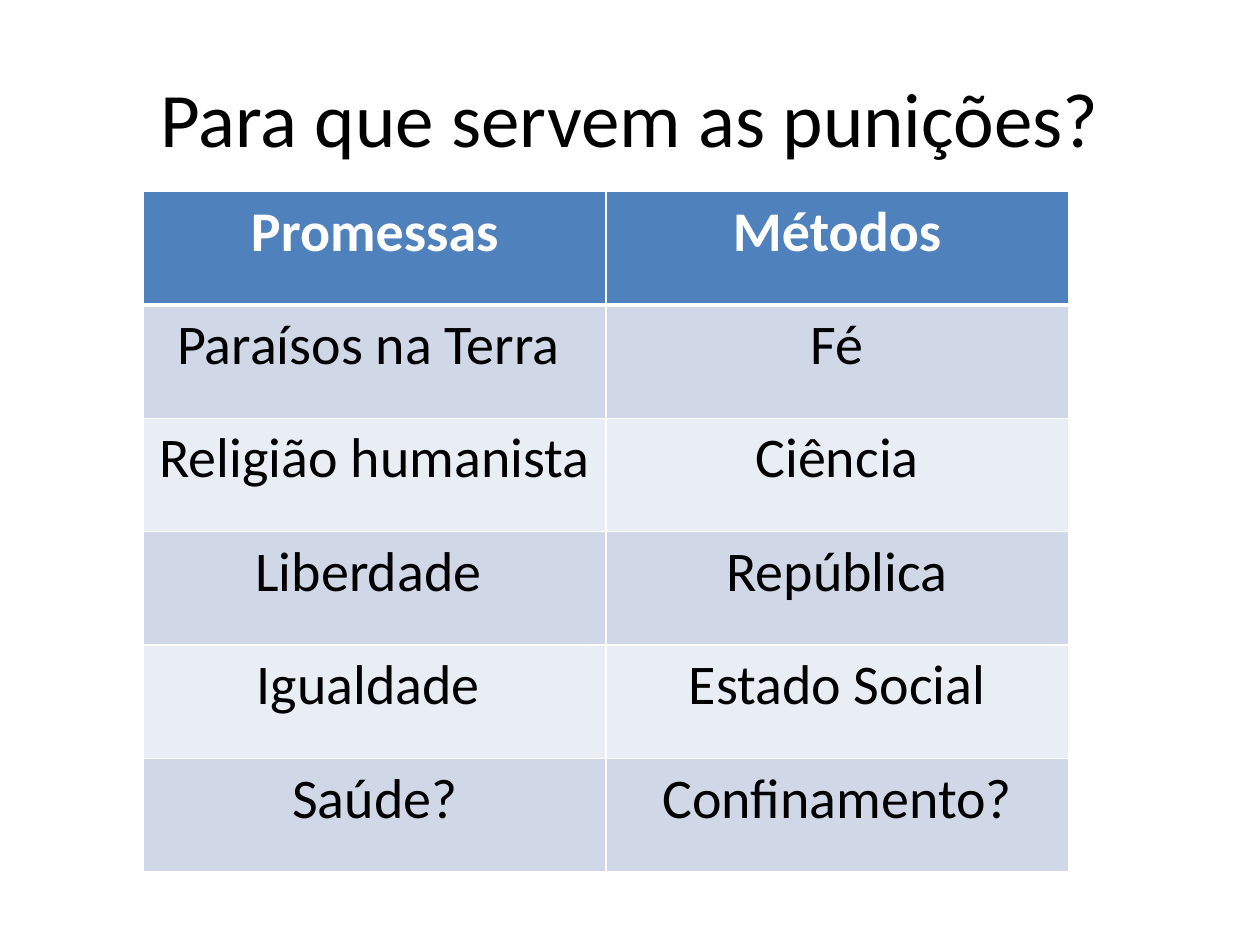
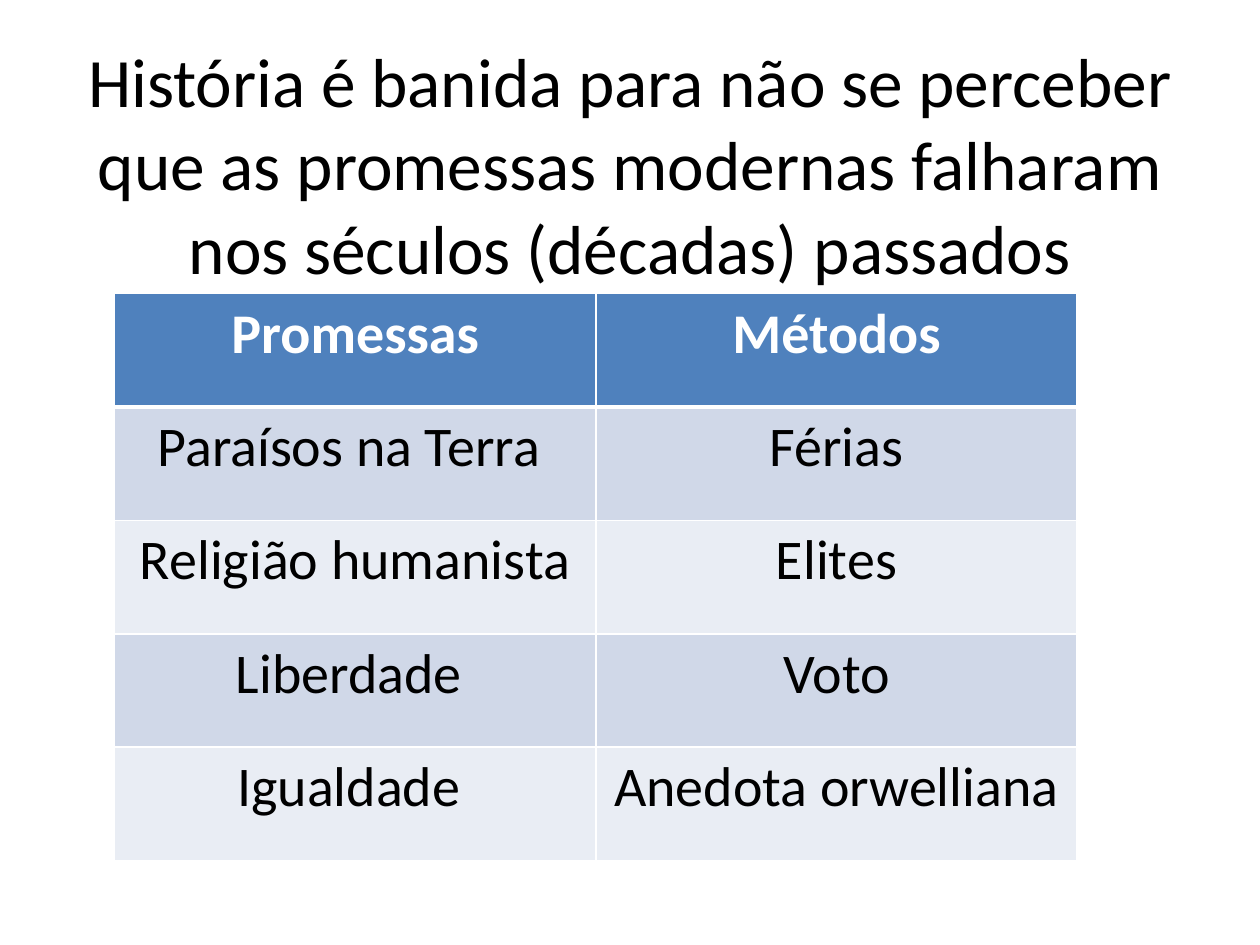
import pptx
import pptx.dml.color
import pptx.enum.text
import pptx.oxml
import pptx.oxml.ns
import pptx.util
from pptx.util import Inches

FONT = "Calibri"
BLACK, WHITE = "000000", "FFFFFF"
HEADER_FILL = "4F81BD"
BAND_FILLS = ("D0D8E8", "E9EDF4")
ROW_HEIGHT = 0.9
CELL_SIZE = 32
HEADINGS = ("Promessas", "Métodos")

SLIDES = [
    {
        "title": "Para que servem as punições?",
        "title_top": 0.3,
        "title_size": 44,
        "table_at": (1.14, 1.52),
        "column_width": 3.67,
        "rows": [
            ("Paraísos na Terra ", "Fé"),
            ("Religião humanista", "Ciência"),
            ("Liberdade ", "República"),
            ("Igualdade ", "Estado Social"),
            ("Saúde?", "Confinamento?"),
        ],
    },
    {
        "title": "História é banida para não se perceber que as promessas "
                 "modernas falharam nos séculos (décadas) passados",
        "title_top": 0.67,
        "title_size": 39.6,
        "table_at": (0.91, 2.33),
        "column_width": 3.82,
        "rows": [
            ("Paraísos na Terra ", "Férias"),
            ("Religião humanista", "Elites"),
            ("Liberdade ", "Voto"),
            ("Igualdade ", "Anedota orwelliana"),
        ],
    },
]


def color(hex_code):
    return pptx.dml.color.RGBColor.from_string(hex_code)


def write_centred(frame, text, size, hex_code, bold=False):
    para = frame.paragraphs[0]
    para.alignment = pptx.enum.text.PP_ALIGN.CENTER
    span = para.add_run()
    span.text = text
    span.font.name = FONT
    span.font.size = pptx.util.Pt(size)
    span.font.bold = bold
    span.font.color.rgb = color(hex_code)


def set_borders(cell, top, bottom):
    """Draw white borders; top and bottom are widths in points."""
    properties = cell._tc.get_or_add_tcPr()
    widths = {"lnL": 1, "lnR": 1, "lnT": top, "lnB": bottom}
    for place, (tag, width) in enumerate(widths.items()):
        line = pptx.oxml.parse_xml(
            f'<a:{tag} {pptx.oxml.ns.nsdecls("a")} w="{pptx.util.Pt(width)}">'
            f'<a:solidFill><a:srgbClr val="{WHITE}"/></a:solidFill></a:{tag}>'
        )
        properties.insert(place, line)


def add_title(page, text, top, size):
    box = page.shapes.add_textbox(Inches(0.5), Inches(top), Inches(9), Inches(1.25))
    frame = box.text_frame
    frame.word_wrap = True
    frame.vertical_anchor = pptx.enum.text.MSO_ANCHOR.MIDDLE
    write_centred(frame, text, size, BLACK)


def add_promise_table(page, at, column_width, body):
    rows = [HEADINGS, *body]
    left, top = at
    table = page.shapes.add_table(
        len(rows), len(HEADINGS), Inches(left), Inches(top),
        Inches(column_width * len(HEADINGS)), Inches(ROW_HEIGHT * len(rows)),
    ).table
    for column in table.columns:
        column.width = Inches(column_width)
    for row_index, texts in enumerate(rows):
        table.rows[row_index].height = Inches(ROW_HEIGHT)
        is_header = row_index == 0
        fill = HEADER_FILL if is_header else BAND_FILLS[(row_index - 1) % 2]
        for column_index, text in enumerate(texts):
            cell = table.cell(row_index, column_index)
            cell.fill.solid()
            cell.fill.fore_color.rgb = color(fill)
            set_borders(cell, top=3 if row_index == 1 else 1, bottom=3 if is_header else 1)
            write_centred(cell.text_frame, text, CELL_SIZE,
                          WHITE if is_header else BLACK, bold=is_header)


def main():
    deck = pptx.Presentation()
    deck.slide_width, deck.slide_height = Inches(10), Inches(7.5)
    for content in SLIDES:
        page = deck.slides.add_slide(deck.slide_layouts[6])
        add_title(page, content["title"], content["title_top"], content["title_size"])
        add_promise_table(page, content["table_at"], content["column_width"], content["rows"])
    deck.save("out.pptx")


if __name__ == "__main__":
    main()
